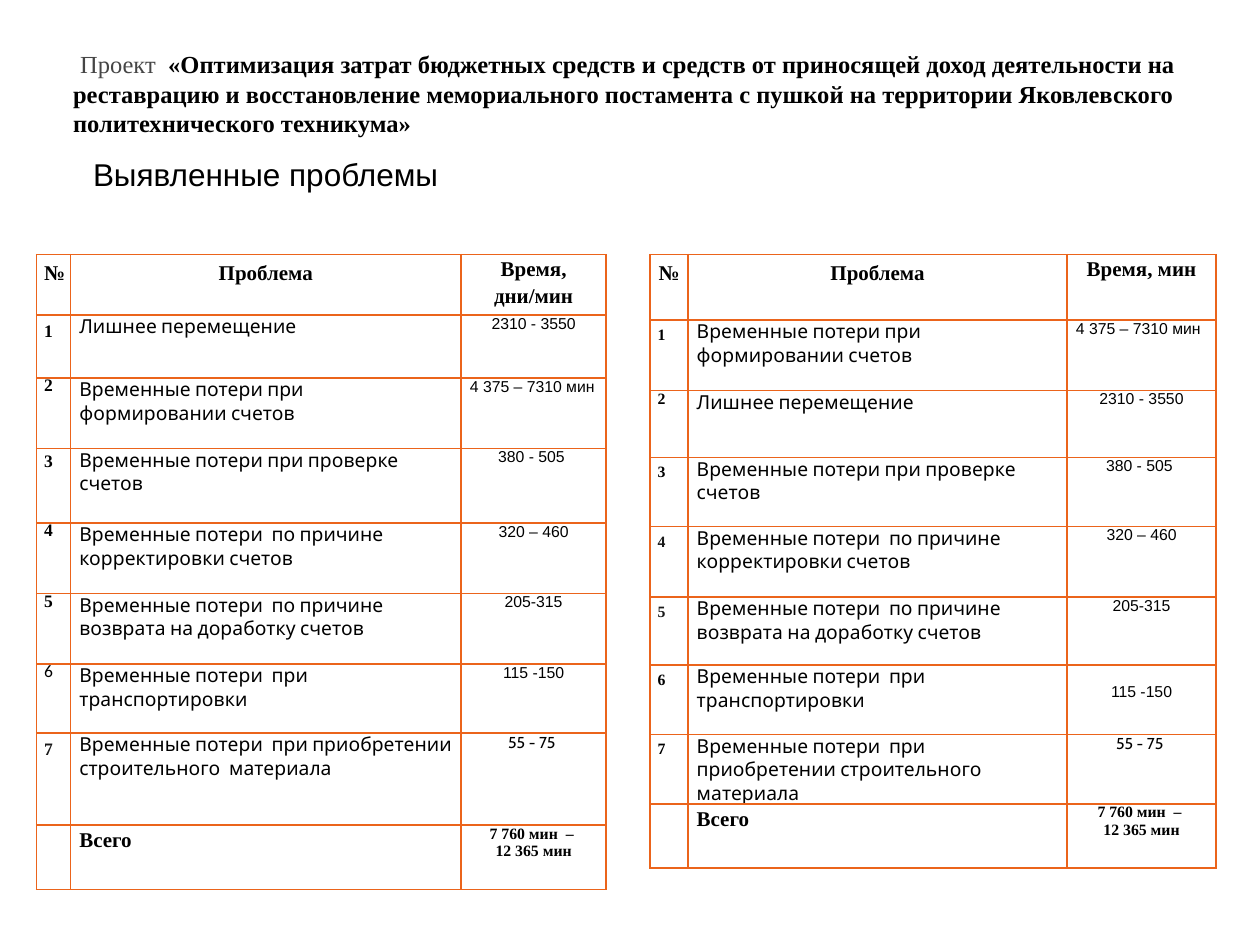
from dataclasses import dataclass

from lxml import etree
from pptx import Presentation
from pptx import util as u
from pptx.dml.color import RGBColor
from pptx.enum import text as t
from pptx.oxml.ns import qn


@dataclass(frozen=True)
class Theme:
    ink: str = "000000"
    number_ink: str = "191919"
    muted: str = "464646"
    paper: str = "FFFFFF"
    border: str = "EB641B"
    serif: str = "Times New Roman"
    sans: str = "Arial"
    body: str = "Cabin"
    plain: str = "Calibri"
    subheading: float = 18
    lead: float = 16
    heading: float = 14
    header: float = 12
    problem: float = 11
    number: float = 10
    small: float = 9


THEME = Theme()
GRID_COLUMNS, GRID_ROWS = 100, 75
LEFT, CENTER = t.PP_ALIGN.LEFT, t.PP_ALIGN.CENTER
WIDE_INSET, HEADER_INSET, NO_INSET = (0.07, 0), (0.06, 0.03), (0, 0)
LOOSE, TIGHT = 1.15, u.Pt(8)


def style(font, size, color=THEME.ink, bold=False):
    return {"name": font, "size": u.Pt(size), "bold": bold, "color": color}


HEADER = style(THEME.serif, THEME.header, bold=True)
PROBLEM = style(THEME.body, THEME.problem)
TIME = style(THEME.sans, THEME.small)
LAST_TIME = style(THEME.body, THEME.small)
TOTAL_TIME = style(THEME.serif, THEME.small, bold=True)


class SlideBuilder:
    def __init__(self, deck, theme):
        self.theme = theme
        self.slide = deck.slides.add_slide(deck.slide_layouts[5])
        self.column = deck.slide_width / GRID_COLUMNS
        self.row = deck.slide_height / GRID_ROWS

    def area(self, left, top, width, height):
        """Turn grid columns and rows into slide lengths."""
        return [int(n * unit) for n, unit in
                zip((left, top, width, height), (self.column, self.row) * 2)]

    def add_runs(self, paragraph, runs, align=LEFT, spacing=None):
        paragraph.alignment = align
        if spacing:
            paragraph.line_spacing = spacing
        for wording, look in runs:
            run = paragraph.add_run()
            run.text = wording
            for key, value in look.items():
                if key == "color":
                    run.font.color.rgb = RGBColor.from_string(value)
                else:
                    setattr(run.font, key, value)

    def title(self, area, runs):
        heading = self.slide.shapes.title
        for key, value in zip(("left", "top", "width", "height"), self.area(*area)):
            setattr(heading, key, value)
        frame = heading.text_frame
        frame.vertical_anchor = t.MSO_ANCHOR.TOP
        frame.word_wrap = True
        frame.auto_size = t.MSO_AUTO_SIZE.SHAPE_TO_FIT_TEXT
        self.add_runs(frame.paragraphs[0], runs)

    def label(self, area, wording, look):
        frame = self.slide.shapes.add_textbox(*self.area(*area)).text_frame
        frame.word_wrap = False
        frame.auto_size = t.MSO_AUTO_SIZE.SHAPE_TO_FIT_TEXT
        self.add_runs(frame.paragraphs[0], [(wording, look)])

    def cell(self, cell, wording, look, align=LEFT, inset=WIDE_INSET, spacing=None, drop=0):
        """Fill one table cell; drop lowers its text by that many inches."""
        across, down = map(u.Inches, inset)
        margins = {"margin_left": across, "margin_right": across,
                   "margin_top": down + u.Inches(drop), "margin_bottom": down}
        for key, value in margins.items():
            setattr(cell, key, value)
        properties = cell._tc.get_or_add_tcPr()
        for side in ("a:lnL", "a:lnR", "a:lnT", "a:lnB"):
            line = etree.SubElement(properties, qn(side), w=str(u.Pt(1)))
            solid = etree.SubElement(line, qn("a:solidFill"))
            etree.SubElement(solid, qn("a:srgbClr"), val=self.theme.border)
        cell.fill.solid()
        cell.fill.fore_color.rgb = RGBColor.from_string(self.theme.paper)
        frame = cell.text_frame
        for index, part in enumerate(wording.split("\n") if wording else []):
            paragraph = frame.add_paragraph() if index else frame.paragraphs[0]
            self.add_runs(paragraph, [(part, look)], align, spacing)

    def table(self, left, top, widths, heights, rows):
        """Add a table; rows hold the keyword arguments of each cell."""
        grid = self.slide.shapes.add_table(
            len(rows), len(widths),
            *self.area(left, top, sum(widths), sum(heights))).table
        grid.first_row = grid.horz_banding = False
        for column, width in zip(grid.columns, widths):
            column.width = int(width * self.column)
        for line, height, cells in zip(grid.rows, heights, rows):
            line.height = int(height * self.row)
            for cell, content in zip(line.cells, cells):
                self.cell(cell, **content)


MOVING = ("Лишнее перемещение", "2310 - 3550")
INVOICING = ("Временные потери при формировании счетов", "4 375 – 7310 мин")
COMMON = [
    ("Временные потери при проверке счетов", "380 - 505 "),
    ("Временные потери  по причине корректировки счетов", "320 – 460"),
    ("Временные потери  по причине возврата на доработку счетов", "205-315"),
    ("Временные потери  при транспортировки", "115 -150"),
    ("Временные потери  при приобретении строительного  материала", "55 - 75 "),
]


def problem_rows(time_heading, problems, numbers, drops):
    """Cells of a whole table; numbers holds a (look, spacing) pair per problem."""
    rows = [[
        dict(wording=wording, look=HEADER, align=CENTER, inset=inset, spacing=LOOSE)
        for wording, inset in (("№", HEADER_INSET), ("Проблема", HEADER_INSET),
                               (time_heading, NO_INSET))
    ]]
    for index, ((problem, time), (look, spacing)) in enumerate(zip(problems, numbers), 1):
        rows.append([
            dict(wording=str(index), look=look, inset=HEADER_INSET, spacing=spacing),
            dict(wording=problem, look=PROBLEM),
            dict(wording=time, look=LAST_TIME if index == len(problems) else TIME,
                 align=LEFT if problem == INVOICING[0] else CENTER,
                 drop=drops.get(index, 0)),
        ])
    rows.append([
        dict(wording="", look=HEADER),
        dict(wording="Всего", look=HEADER, spacing=LOOSE),
        dict(wording="7 760 мин  – \n12 365 мин", look=TOTAL_TIME, align=CENTER),
    ])
    return rows


def main():
    deck = Presentation()
    deck.slide_width, deck.slide_height = u.Inches(10), u.Inches(7.5)
    page = SlideBuilder(deck, THEME)

    page.title((4.8, 3.1, 92.4, 8.4), [
        (" ", style(THEME.serif, THEME.lead, THEME.muted)),
        ("Проект  ", style(THEME.serif, THEME.heading, THEME.muted)),
        ("«Оптимизация затрат бюджетных средств и средств от приносящей доход "
         "деятельности на реставрацию и восстановление мемориального постамента "
         "с пушкой на территории Яковлевского политехнического техникума»",
         style(THEME.serif, THEME.heading, bold=True)),
    ])
    page.label((6.4, 11.8, 29.7, 4), "Выявленные проблемы",
               style(THEME.sans, THEME.subheading))

    number = style(THEME.serif, THEME.number, bold=True)
    dark_number = {**number, "color": THEME.number_ink}
    plain_number = style(THEME.plain, THEME.number)
    page.table(2.9, 20.2, [2.7, 31, 11.5],
               [4.8, 5, 5.6, 5.9, 5.6, 5.6, 5.5, 7.3, 5.1],
               problem_rows("Время, дни/мин", [MOVING, INVOICING] + COMMON,
                            [(number, LOOSE), (number, TIGHT), (number, None),
                             (number, TIGHT), (number, TIGHT), (plain_number, TIGHT),
                             (dark_number, LOOSE)], {}))

    small_number = style(THEME.serif, THEME.small, bold=True)
    small_dark = {**small_number, "color": THEME.number_ink}
    page.table(51.6, 20.2, [3, 30.1, 11.8],
               [5.2, 5.6, 5.3, 5.5, 5.6, 5.4, 5.5, 5.5, 5.1],
               problem_rows("Время, мин", [INVOICING, MOVING] + COMMON,
                            [(small_number, LOOSE), (small_number, TIGHT),
                             (small_number, LOOSE), (small_dark, LOOSE),
                             (small_dark, LOOSE), (small_number, LOOSE),
                             (small_number, LOOSE)], {6: 0.14}))

    deck.save("out.pptx")


if __name__ == "__main__":
    main()
